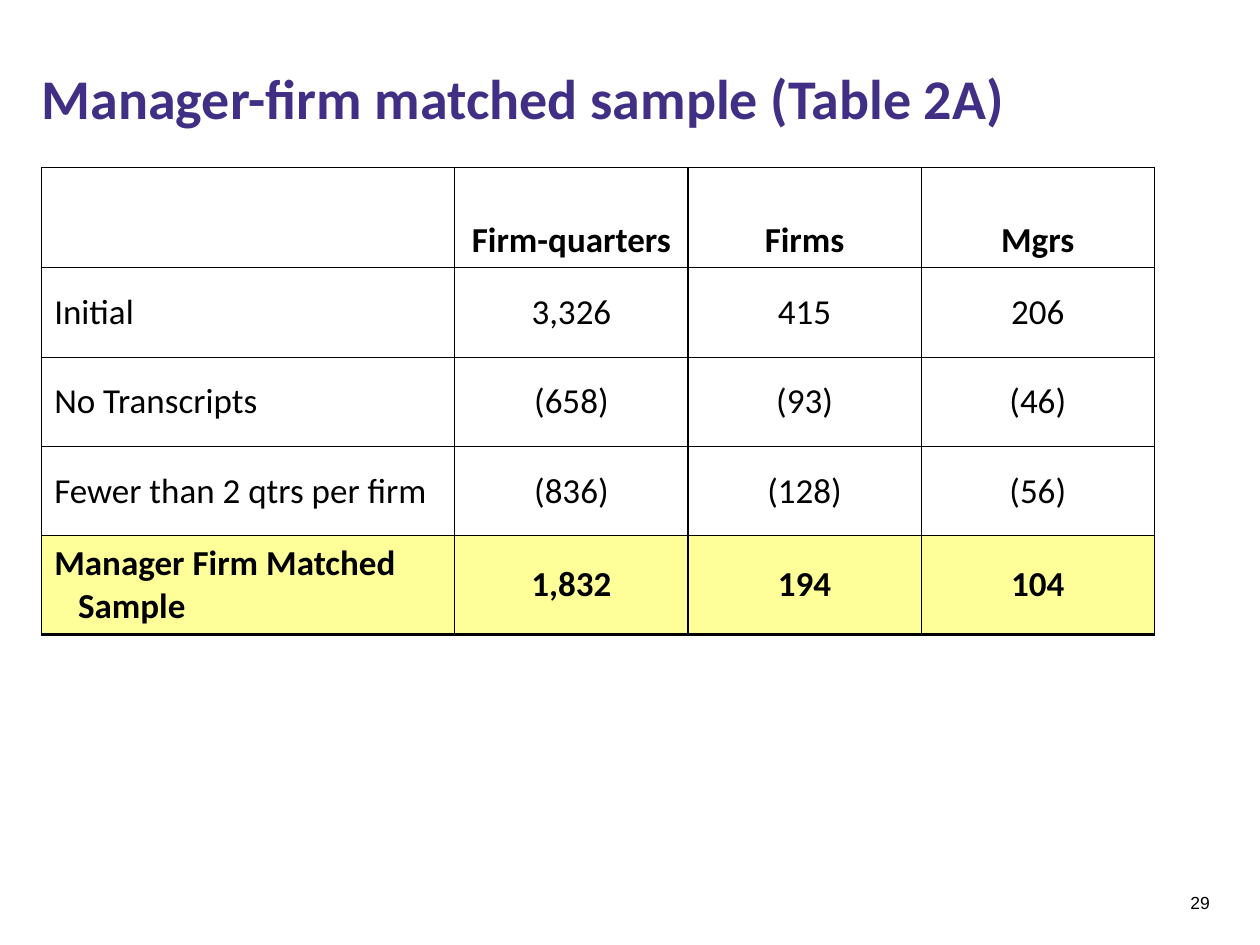
"""Build the slide with the manager-firm matched sample table."""
from dataclasses import dataclass

from lxml.etree import SubElement
from pptx import Presentation
from pptx.dml.color import RGBColor
from pptx.enum.text import MSO_ANCHOR as Anchor, MSO_AUTO_SIZE as AutoSize, PP_ALIGN as Align
from pptx.oxml.ns import qn
from pptx.util import Cm, Pt

COLORS = {"title": "412F86", "ink": "000000", "total": "FFFF99"}
COLUMN_WIDTHS = (8.33, 4.7, 4.7, 4.7)
EDGES = ("lnL", "lnR", "lnT", "lnB")
HANGING_INDENT = Cm(0.48)


@dataclass
class SampleRow:
    entries: tuple[str, ...]
    height: float = 1.8
    bold: bool = False
    header: bool = False
    fill: str = ""
    bottom_width: float = 0.75


SAMPLE = (
    SampleRow(("", "Firm-quarters", "Firms", "Mgrs"), 2.02, bold=True, header=True),
    SampleRow(("Initial", "3,326", "415", "206")),
    SampleRow(("No Transcripts", "(658)", "(93)", "(46)")),
    SampleRow(("Fewer than 2 qtrs per firm", "(836)", "(128)", "(56)")),
    SampleRow(("Manager Firm Matched Sample", "1,832", "194", "104"), 1.96,
              bold=True, fill="total", bottom_width=2),
)


def apply(target, values: dict) -> None:
    for attribute, value in values.items():
        setattr(target, attribute, value)


def write(frame, text: str, align, size: float, color: str,
          font: str = "Calibri", bold: bool = False):
    frame.text = text
    paragraph = frame.paragraphs[0]
    paragraph.alignment = align
    apply(paragraph.runs[0].font, {"name": font, "size": Pt(size), "bold": bold})
    paragraph.runs[0].font.color.rgb = RGBColor.from_string(COLORS[color])
    return paragraph


def place(shape, left: float, top: float, width: float, height: float) -> None:
    apply(shape, {"left": Cm(left), "top": Cm(top), "width": Cm(width), "height": Cm(height)})
    apply(shape.text_frame, {
        "margin_left": 0, "margin_top": 0, "margin_right": 0, "margin_bottom": 0,
        "word_wrap": True, "auto_size": AutoSize.NONE, "vertical_anchor": Anchor.TOP})


def draw_borders(cell, bottom_width: float) -> None:
    properties = cell._tc.get_or_add_tcPr()
    for edge in EDGES:
        width = bottom_width if edge == "lnB" else 0.75
        line = SubElement(properties, qn(f"a:{edge}"), w=str(Pt(width)))
        solid = SubElement(line, qn("a:solidFill"))
        SubElement(solid, qn("a:srgbClr"), val=COLORS["ink"])


def fill_cell(cell, entry: str, row: SampleRow, align) -> None:
    draw_borders(cell, row.bottom_width)
    cell.vertical_anchor = Anchor.BOTTOM if row.header else Anchor.MIDDLE
    if row.fill:
        cell.fill.solid()
        cell.fill.fore_color.rgb = RGBColor.from_string(COLORS[row.fill])
    else:
        cell.fill.background()
    if not entry:
        return
    paragraph = write(cell.text_frame, entry, align, 20, "ink", bold=row.bold)
    if row.header:
        paragraph.line_spacing = 1.05
    else:
        indents = paragraph._p.get_or_add_pPr()
        indents.set("marL", str(HANGING_INDENT))
        indents.set("indent", str(-HANGING_INDENT))


def add_sample_table(slide) -> None:
    table = slide.shapes.add_table(
        len(SAMPLE), len(COLUMN_WIDTHS), Cm(0.84), Cm(3.38),
        Cm(sum(COLUMN_WIDTHS)), Cm(sum(row.height for row in SAMPLE))).table
    apply(table, {"first_row": False, "horz_banding": False})
    for column, width in zip(table.columns, COLUMN_WIDTHS):
        column.width = Cm(width)
    for r, row in enumerate(SAMPLE):
        table.rows[r].height = Cm(row.height)
        for c, entry in enumerate(row.entries):
            fill_cell(table.cell(r, c), entry, row, Align.CENTER if c else Align.LEFT)


def main() -> None:
    deck = Presentation()
    apply(deck, {"slide_width": Cm(25.4), "slide_height": Cm(19.05)})
    slide = deck.slides.add_slide(deck.slide_layouts[5])

    title = slide.shapes.title
    place(title, 0.84, 1.27, 23.22, 2.54)
    write(title.text_frame, "Manager-firm matched sample (Table 2A)",
          Align.LEFT, 32, "title", bold=True)

    add_sample_table(slide)

    page_number = slide.shapes.add_textbox(0, 0, 0, 0)
    place(page_number, 23.5, 17.98, 0.89, 0.43)
    write(page_number.text_frame, "29", Align.RIGHT, 10, "ink", font="Arial")

    deck.save("out.pptx")


if __name__ == "__main__":
    main()
